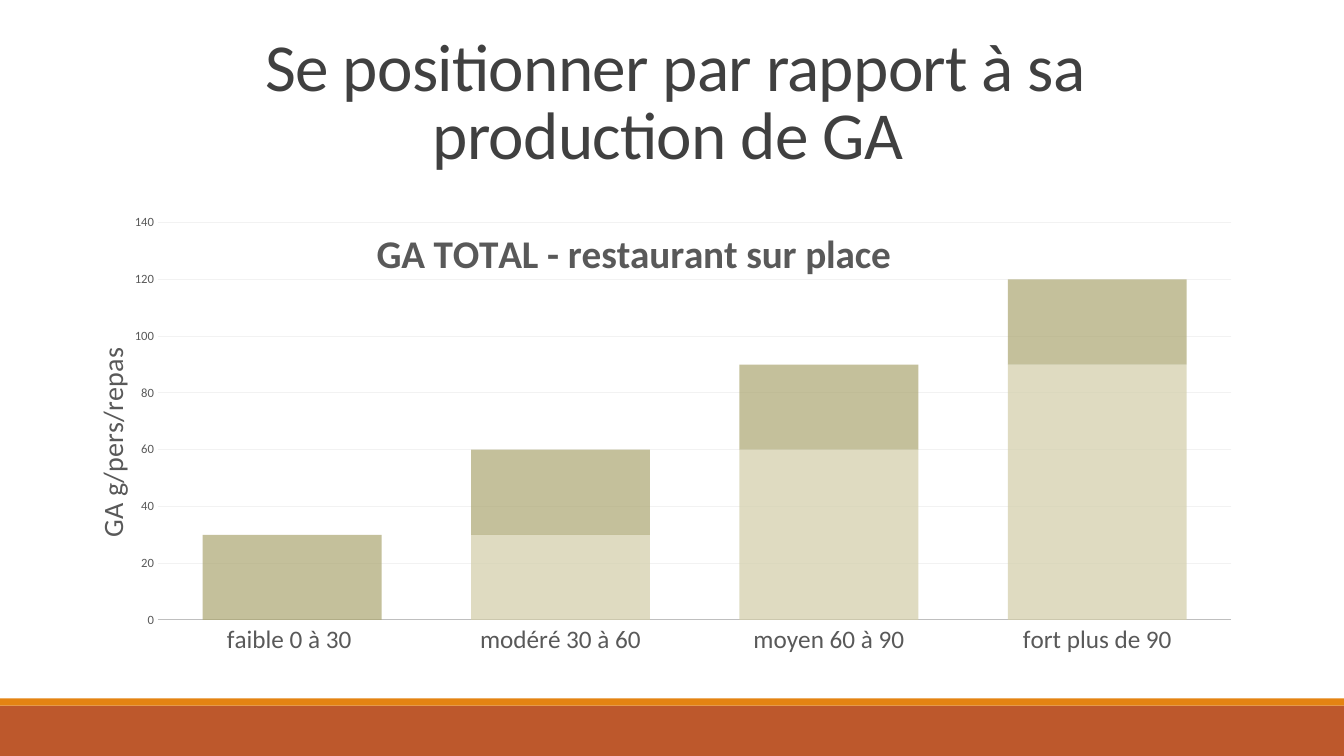
from lxml import etree
from pptx import Presentation
from pptx.chart import data
from pptx.dml import color
from pptx.enum import chart as kinds, shapes, text
from pptx.oxml import ns
from pptx.util import Pt

PX = 9525
FONT = "Calibri"
COLORS = {
    "footer": "BD582C", "stripe": "E48312", "heading": "404040",
    "label": "595959", "baseline": "BFBFBF", "grid": "F2F2F2",
    "lower": "D2CDA8", "upper": "ACA671",
}
LEVELS = ["faible 0 à 30 ", "modéré 30 à 60", "moyen 60 à 90", "fort plus de 90"]
SERIES = [("Series 1", "lower", [0, 30, 60, 90]), ("Series 2", "upper", [30] * 4)]


def px(*lengths):
    return [length * PX for length in lengths]


def rgb(name):
    return color.RGBColor.from_string(COLORS[name])


def apply(target, values):
    for name, value in values.items():
        setattr(target, name, value)


def style_font(font, size, shade, bold=False):
    apply(font, {"name": FONT, "size": Pt(size), "bold": bold})
    font.color.rgb = rgb(shade)


def style_line(line, shade):
    line.color.rgb = rgb(shade)
    line.width = Pt(0.75)


def add_band(slide, box, shade):
    band = slide.shapes.add_shape(shapes.MSO_SHAPE.RECTANGLE, *px(*box))
    band.shadow.inherit = False
    band.fill.solid()
    band.fill.fore_color.rgb = rgb(shade)
    band.line.fill.background()


def add_heading(slide, box, words):
    frame = slide.shapes.add_textbox(*px(*box)).text_frame
    apply(frame, {"word_wrap": True, "vertical_anchor": text.MSO_ANCHOR.TOP})
    paragraph = frame.paragraphs[0]
    apply(paragraph, {"alignment": text.PP_ALIGN.CENTER, "line_spacing": 0.85})
    run = paragraph.add_run()
    run.text = words
    style_font(run.font, 48, "heading")
    run.font._element.set("spc", "-50")


def place(parent, index, values):
    for old in parent.findall(ns.qn("c:layout")):
        parent.remove(old)
    layout = etree.Element(ns.qn("c:layout"))
    manual = etree.SubElement(layout, ns.qn("c:manualLayout"))
    for name, value in values.items():
        etree.SubElement(manual, ns.qn(f"c:{name}")).set("val", str(value))
    parent.insert(index, layout)


def write_title(title, words, size, x, y, bold=False):
    run = title.text_frame.paragraphs[0].add_run()
    run.text = words
    style_font(run.font, size, "label", bold)
    place(title._element, 1, {"xMode": "edge", "yMode": "edge", "x": x, "y": y})
    title._element.find(ns.qn("c:overlay")).set("val", "1")


def fill_series(series, shade):
    series.format.fill.solid()
    series.format.fill.fore_color.rgb = rgb(shade)
    series.format.line.fill.background()
    tone = series._element.find(".//" + ns.qn("a:srgbClr"))
    etree.SubElement(tone, ns.qn("a:alpha")).set("val", "70000")


def style_axes(chart):
    levels, grams = chart.category_axis, chart.value_axis
    for axis, size in ((levels, 18), (grams, 9)):
        apply(axis, {"major_tick_mark": kinds.XL_TICK_MARK.NONE,
                     "minor_tick_mark": kinds.XL_TICK_MARK.NONE})
        style_font(axis.tick_labels.font, size, "label")
    style_line(levels.format.line, "baseline")
    apply(grams, {"minimum_scale": 0, "maximum_scale": 140, "major_unit": 20,
                  "has_major_gridlines": True})
    grams.format.line.fill.background()
    style_line(grams.major_gridlines.format.line, "grid")
    write_title(grams.axis_title, "GA g/pers/repas ", 20, 0.01, 0.35)
    turn = grams.axis_title._element.find(".//" + ns.qn("a:bodyPr"))
    turn.set("rot", "-5400000")
    turn.set("vert", "horz")


def add_waste_chart(slide, box):
    production = data.CategoryChartData()
    production.categories = LEVELS
    for name, _, values in SERIES:
        production.add_series(name, values)
    chart = slide.shapes.add_chart(
        kinds.XL_CHART_TYPE.COLUMN_STACKED, *px(*box), production).chart
    apply(chart, {"has_legend": False, "has_title": True})
    apply(chart.font, {"name": FONT, "size": Pt(10)})
    columns = chart.plots[0]
    apply(columns, {"gap_width": 50, "overlap": 100, "vary_by_categories": False})
    for series, (_, shade, _) in zip(columns.series, SERIES):
        fill_series(series, shade)
    style_axes(chart)
    write_title(chart.chart_title, "GA TOTAL - restaurant sur place", 28, 0.25, 0.13, True)
    area = chart._chartSpace.find(".//" + ns.qn("c:plotArea"))
    place(area, 0, {"layoutTarget": "inner", "xMode": "edge", "yMode": "edge",
                    "x": 0.07, "y": 0.135, "w": 0.913, "h": 0.751})


def main():
    deck = Presentation()
    width, height = px(1280, 720)
    apply(deck, {"slide_width": width, "slide_height": height})
    slide = deck.slides.add_slide(deck.slide_layouts[6])
    add_band(slide, (0, 672, 1280, 48), "footer")
    add_band(slide, (0, 665, 1280, 7), "stripe")
    add_heading(slide, (115, 30, 1056, 153),
                "Se positionner par rapport à sa production de GA ")
    add_waste_chart(slide, (72, 144, 1120, 504))
    deck.save("out.pptx")


if __name__ == "__main__":
    main()
